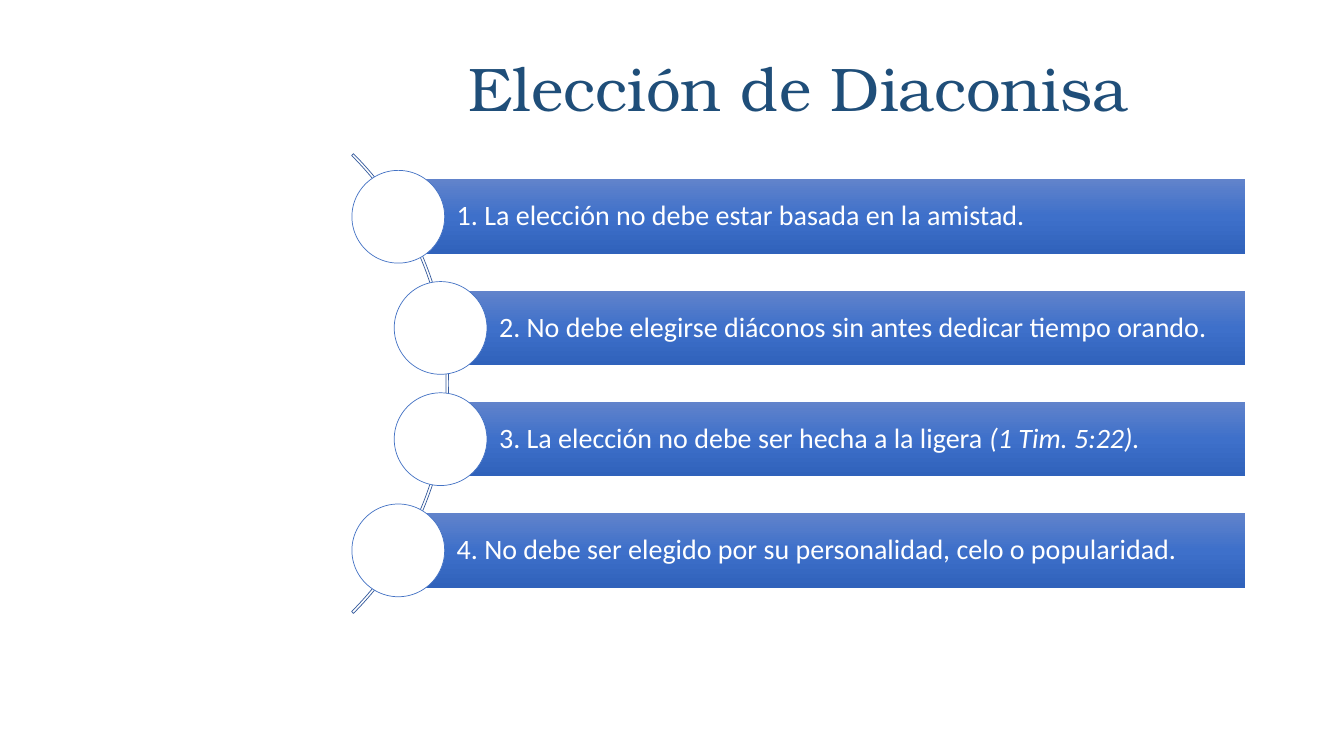
from copy import deepcopy
from dataclasses import dataclass

from pptx import Presentation
from pptx.dml.color import RGBColor as RGB
from pptx.enum.shapes import MSO_SHAPE as Shape
from pptx.enum.text import MSO_ANCHOR as Anchor, PP_ALIGN as Align
from pptx.oxml.ns import qn
from pptx.util import Inches, Pt


@dataclass(frozen=True)
class Theme:
    title_font: str = "TeX Gyre Bonum"
    body_font: str = "Calibri"
    title_size: int = 44
    body_size: int = 20
    title: str = "1F4E79"
    white: str = "FFFFFF"
    arc: str = "365B9D"
    ring: str = "4472C4"
    bar: tuple = ((0, "6183CB"), (0.5, "3E70CA"), (1, "3062BB"))
    line: float = 0.5


THEME = Theme()

# Each rule is the plain text and the italic text that ends it.
RULES = [
    ("1. La elección no debe estar basada en la amistad.", ""),
    ("2. No debe elegirse diáconos sin antes dedicar tiempo orando.", ""),
    ("3. La elección no debe ser hecha a la ligera ", "(1 Tim. 5:22)."),
    ("4. No debe ser elegido por su personalidad, celo o popularidad.", ""),
]


def add_shape(slide, kind, left, top, width, height):
    shape = slide.shapes.add_shape(
        kind, Inches(left), Inches(top), Inches(width), Inches(height))
    shape.shadow.inherit = False
    return shape


def set_line(shape, color):
    shape.line.color.rgb = RGB.from_string(color)
    shape.line.width = Pt(THEME.line)


def set_font(run, name, size, color):
    run.font.name = name
    run.font.size = Pt(size)
    run.font.color.rgb = RGB.from_string(color)


def set_gradient(shape, stops):
    """Fill the shape from top to bottom through three or more stops."""
    fill = shape.fill
    fill.gradient()
    fill.gradient_angle = 270
    group = shape._element.spPr.find(qn("a:gradFill")).find(qn("a:gsLst"))
    while len(group) < len(stops):
        group.append(deepcopy(group[-1]))
    for stop, (place, color) in zip(fill.gradient_stops, stops):
        stop.position = place
        stop.color.rgb = RGB.from_string(color)


def add_title(slide, text, left, top, width, height):
    box = slide.shapes.add_textbox(
        Inches(left), Inches(top), Inches(width), Inches(height))
    frame = box.text_frame
    frame.word_wrap = True
    frame.vertical_anchor = Anchor.MIDDLE
    frame.text = text
    para = frame.paragraphs[0]
    para.alignment = Align.CENTER
    para.line_spacing = 0.9
    set_font(para.runs[0], THEME.title_font, THEME.title_size, THEME.title)


def add_bar(slide, plain, italic, left, top, width, height):
    bar = add_shape(slide, Shape.RECTANGLE, left, top, width, height)
    set_gradient(bar, THEME.bar)
    bar.line.fill.background()
    frame = bar.text_frame
    frame.word_wrap = True
    frame.vertical_anchor = Anchor.MIDDLE
    frame.margin_left = Inches(0.58)
    frame.margin_top = frame.margin_right = frame.margin_bottom = Inches(0.06)
    frame.text = plain
    para = frame.paragraphs[0]
    para.alignment = Align.LEFT
    para.line_spacing = 0.9
    if italic:
        tail = para.add_run()
        tail.text = italic
        tail.font.italic = True
    for run in para.runs:
        set_font(run, THEME.body_font, THEME.body_size, THEME.white)


def add_list(slide, rules, left, top, width, height):
    """Hang the rules on a curve that bulges to the right."""
    disc, deep, inset, ring = 0.92, 0.74, 0.42, 6.45
    right = left + width
    arc = add_shape(slide, Shape.BLOCK_ARC, left + 0.96 - ring,
                    top + (height - ring) / 2, ring, ring)
    for i, value in enumerate((189, 27, 0.004)):
        arc.adjustments[i] = value
    arc.fill.background()
    set_line(arc, THEME.arc)

    step = (height - disc) / (len(rules) - 1)
    for i, (plain, italic) in enumerate(rules):
        edge = i in (0, len(rules) - 1)
        x = left if edge else left + inset
        y = top + i * step
        start = x + disc / 2
        add_bar(slide, plain, italic,
                start, y + (disc - deep) / 2, right - start, deep)
        dot = add_shape(slide, Shape.OVAL, x, y, disc, disc)
        dot.fill.solid()
        dot.fill.fore_color.rgb = RGB.from_string(THEME.white)
        set_line(dot, THEME.ring)


def main():
    deck = Presentation()
    deck.slide_width = Inches(13.33)
    deck.slide_height = Inches(7.5)
    slide = deck.slides.add_slide(deck.slide_layouts[6])
    add_title(slide, "Elección de Diaconisa", 2.73, 0.18, 10.38, 1.45)
    add_list(slide, RULES, 3.49, 1.69, 8.86, 4.23)
    deck.save("out.pptx")


if __name__ == "__main__":
    main()
